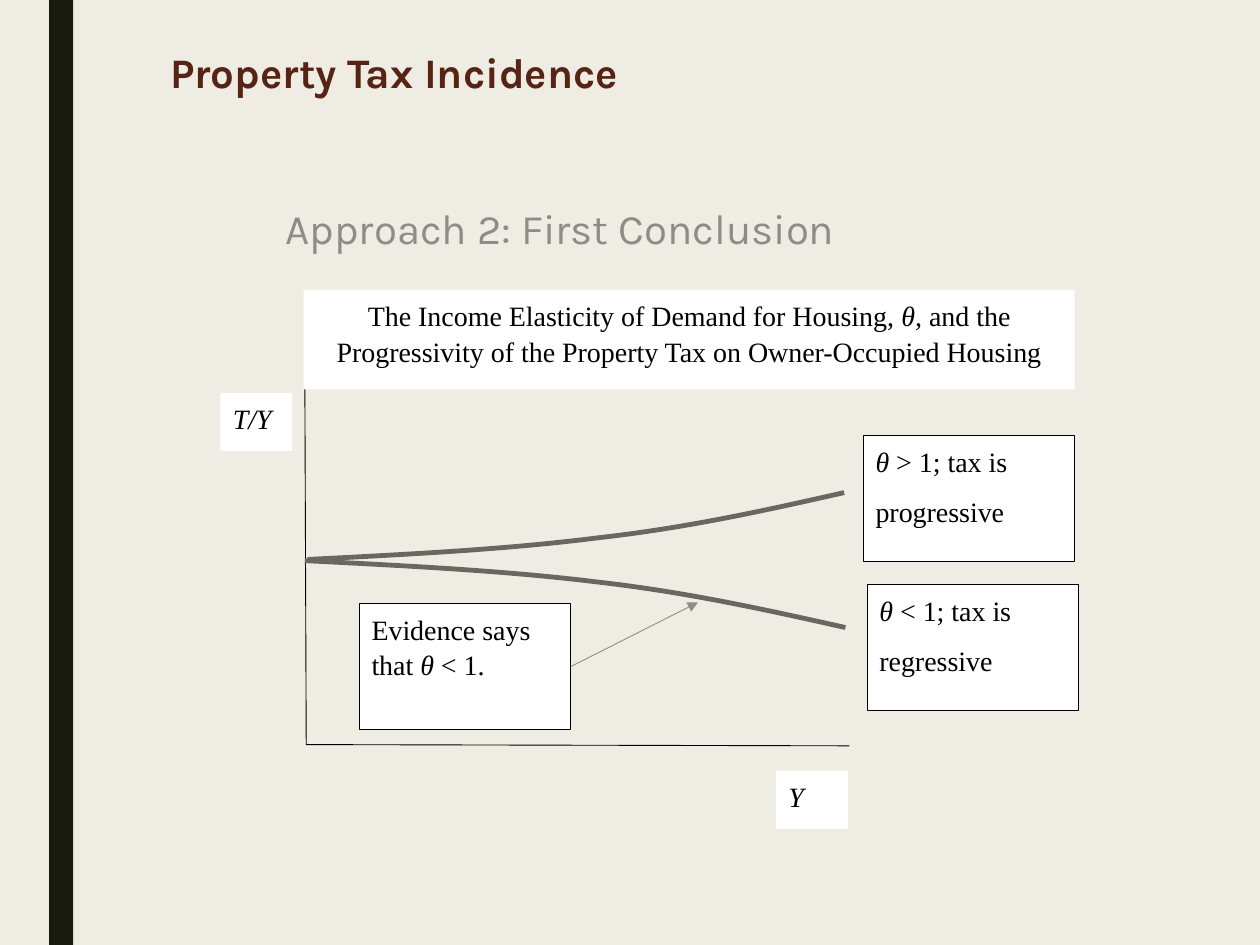
import pptx
import pptx.util
import pptx.dml.color
import pptx.enum.shapes
import pptx.enum.text
import pptx.oxml
import pptx.oxml.ns
from dataclasses import dataclass

Pt = pptx.util.Pt
Align = pptx.enum.text.PP_ALIGN
Anchor = pptx.enum.text.MSO_ANCHOR


@dataclass(frozen=True)
class Theme:
    background: str = "EFEDE3"
    bar: str = "191B0E"
    title: str = "572314"
    muted: str = "8C8D86"
    curve: str = "686863"
    ink: str = "000000"
    paper: str = "FFFFFF"
    heading_font: str = "Karla"
    label_font: str = "Times New Roman"
    heading_size: float = 24
    label_size: float = 16
    thin: float = 0.5
    thick: float = 2.75


THEME = Theme()

TITLE = "Property Tax Incidence"
SUBTITLE = "Approach 2: First Conclusion"

AXES = [((174.2, 215.3), (175, 425.5)), ((175, 425.5), (485.3, 426.2))]
CURVES = [
    [(175.7, 319.7), (233.3, 316.8), (290.2, 313.9), (341.3, 307.4),
     (392.4, 301.7), (437.8, 291.6), (482.4, 281.5)],
    [(174.2, 320.4), (231.8, 323.3), (289.4, 326.2), (341.3, 332.6),
     (392.4, 338.4), (437.8, 348.5), (483.1, 358.6)],
]
ARROW_TIP = (398.9, 344.2)

AXIS_SIZE = (41, 33.1)
NOTE_SIZE = (121, 72)
CAPTION_SIZE = (440.6, 56.9)

# Each paragraph is a list of (text, italic) spans.
AXIS_LABELS = [
    ((126, 224.6), [[("T/Y", True)]]),
    ((443.5, 440.6), [[("Y", True)]]),
]
OUTCOMES = [
    ((493.2, 249.1), [[("θ", True), (" > 1; tax is", False)], [("progressive", False)]]),
    ((495.4, 334.1), [[("θ", True), (" < 1; tax is", False)], [("regressive", False)]]),
]
EVIDENCE = ((205.2, 344.9),
            [[("Evidence says that", False), (" θ", True), (" < 1.", False)]])
CAPTION = ((173.5, 165.6),
           [[("The Income Elasticity of Demand for Housing, ", False), ("θ, ", True),
             ("and the Progressivity of the Property Tax on Owner-Occupied Housing", False)]])


def points(*values):
    return [Pt(value) for value in values]


def color(value):
    return pptx.dml.color.RGBColor.from_string(value)


def style_line(line, line_color, width):
    line.color.rgb = color(line_color)
    line.width = Pt(width)


def add_rectangle(slide, position, size, fill, outlined=False):
    box = slide.shapes.add_shape(pptx.enum.shapes.MSO_SHAPE.RECTANGLE,
                                 *points(*position, *size))
    box.shadow.inherit = False
    box.fill.solid()
    box.fill.fore_color.rgb = color(fill)
    if outlined:
        style_line(box.line, THEME.ink, THEME.thin)
    else:
        box.line.fill.background()
    return box


def add_label(slide, label, size, outlined=False, alignment=Align.LEFT):
    position, paragraphs = label
    box = add_rectangle(slide, position, size, THEME.paper, outlined)
    frame = box.text_frame
    frame.word_wrap = True
    frame.vertical_anchor = Anchor.TOP
    for index, spans in enumerate(paragraphs):
        para = frame.add_paragraph() if index else frame.paragraphs[0]
        para.alignment = alignment
        para.line_spacing = 1.07
        para.space_after = Pt(8)
        para.font.name = THEME.label_font
        para.font.size = Pt(THEME.label_size)
        para.font.color.rgb = color(THEME.ink)
        for text, italic in spans:
            span = para.add_run()
            span.text = text
            span.font.italic = italic
    return box


def write_heading(frame, text, text_color, bold):
    frame.text = text
    frame.word_wrap = True
    frame.auto_size = pptx.enum.text.MSO_AUTO_SIZE.NONE
    para = frame.paragraphs[0]
    para.alignment = Align.LEFT
    para.font.name = THEME.heading_font
    para.font.size = Pt(THEME.heading_size)
    para.font.bold = bold
    para.font.color.rgb = color(text_color)


def add_line(slide, start, end, line_color):
    line = slide.shapes.add_connector(pptx.enum.shapes.MSO_CONNECTOR.STRAIGHT,
                                      *points(*start, *end))
    style_line(line.line, line_color, THEME.thin)
    pptx.oxml.ns.qn("a:effectLst")
    line._element.spPr.append(new_element("a:effectLst"))
    return line


def new_element(tag):
    return pptx.oxml.parse_xml(f"<{tag} {pptx.oxml.ns.nsdecls('a')}/>")


def add_curve(slide, nodes):
    builder = slide.shapes.build_freeform(*points(*nodes[0]))
    builder.add_line_segments([points(*node) for node in nodes[1:]], close=False)
    curve = builder.convert_to_shape()
    curve.shadow.inherit = False
    curve.fill.background()
    style_line(curve.line, THEME.curve, THEME.thick)
    segments = list(curve._element.iter(pptx.oxml.ns.qn("a:lnTo")))
    outline = segments[0].getparent()
    for first in range(0, len(segments), 3):
        bezier = new_element("a:cubicBezTo")
        for segment in segments[first:first + 3]:
            bezier.append(segment[0])
            outline.remove(segment)
        outline.append(bezier)


def main():
    deck = pptx.Presentation()
    deck.slide_width, deck.slide_height = points(720, 540)
    slide = deck.slides.add_slide(deck.slide_layouts.get_by_name("Title Only"))
    slide.background.fill.solid()
    slide.background.fill.fore_color.rgb = color(THEME.background)

    add_rectangle(slide, (28.1, 0), (13.7, 540), THEME.bar)

    title = slide.shapes.title
    title.left, title.top, title.width, title.height = points(84.2, 21.6, 590.4, 38.2)
    write_heading(title.text_frame, TITLE, THEME.title, True)
    title.text_frame.margin_left = Pt(13)
    title.text_frame.vertical_anchor = Anchor.MIDDLE

    subtitle = slide.shapes.add_textbox(*points(156.2, 112.3, 337, 36))
    write_heading(subtitle.text_frame, SUBTITLE, THEME.muted, False)

    for start, end in AXES:
        add_line(slide, start, end, THEME.ink)
    for label in AXIS_LABELS:
        add_label(slide, label, AXIS_SIZE)
    for nodes in CURVES:
        add_curve(slide, nodes)
    for label in OUTCOMES:
        add_label(slide, label, NOTE_SIZE, outlined=True)

    evidence = add_label(slide, EVIDENCE, NOTE_SIZE, outlined=True)
    arrow = add_line(slide, EVIDENCE[0], ARROW_TIP, THEME.muted)
    arrow.begin_connect(evidence, 3)
    head = new_element("a:tailEnd")
    head.set("type", "triangle")
    arrow.line._get_or_add_ln().append(head)

    add_label(slide, CAPTION, CAPTION_SIZE, alignment=Align.CENTER)
    deck.save("out.pptx")


if __name__ == "__main__":
    main()
